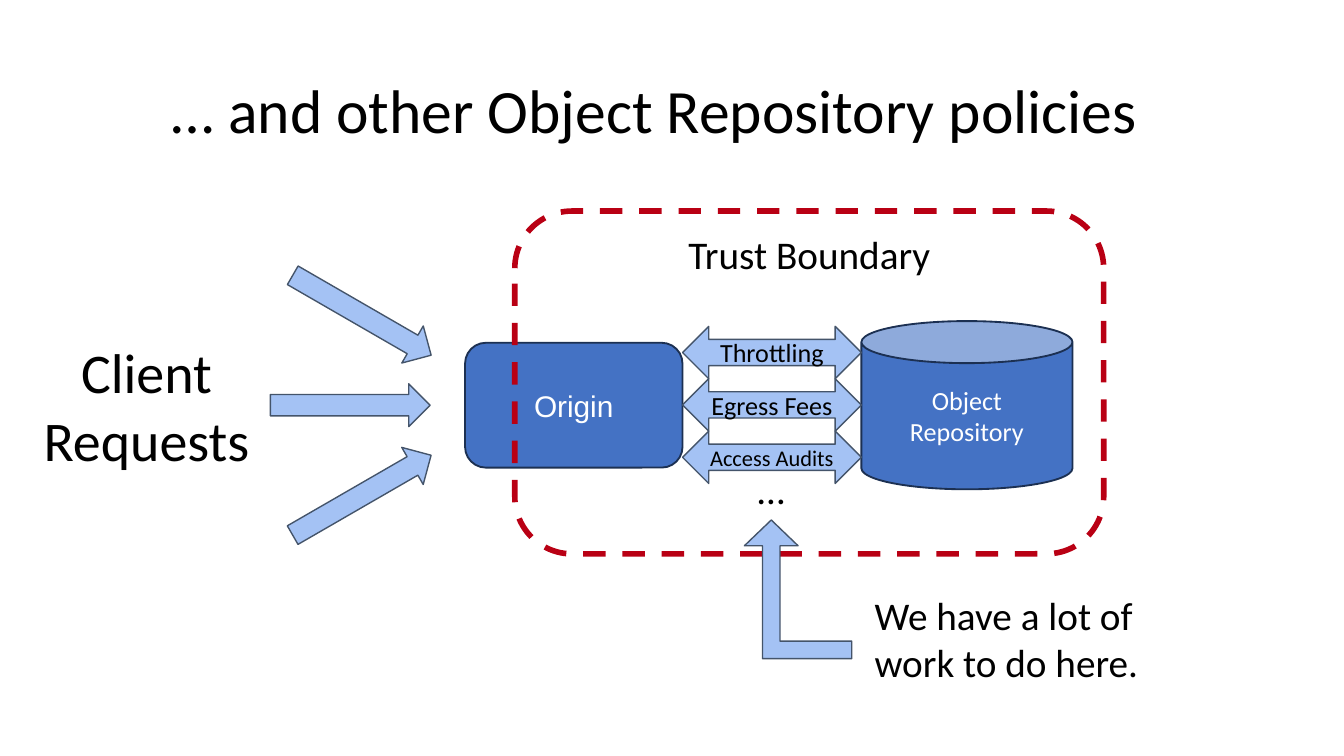
from pptx import Presentation
from pptx.dml.color import RGBColor
from pptx.enum.dml import MSO_LINE_DASH_STYLE as Dash
from pptx.enum.shapes import MSO_SHAPE as Shape
from pptx.enum.text import MSO_ANCHOR as Anchor, PP_ALIGN as Align
from pptx.util import Cm, Pt

COLORS = {
    "text": "000000", "inverse": "FFFFFF",
    "node": "4472C4", "node_line": "1C3052",
    "arrow": "A4C2F4", "arrow_line": "44546A",
    "boundary": "B90014",
}


def color(name):
    return RGBColor.from_string(COLORS[name])


def write(shape, text, size=21, font="Calibri", ink="text", align=Align.CENTER,
          anchor=Anchor.MIDDLE, inset=(0.25, 0.25), spacing=None):
    """Fill a shape with text, one paragraph per line."""
    frame = shape.text_frame
    frame.word_wrap = True
    frame.vertical_anchor = anchor
    frame.margin_left = frame.margin_right = Cm(inset[0])
    frame.margin_top = frame.margin_bottom = Cm(inset[1])
    frame.text = text
    for line in frame.paragraphs:
        line.alignment = align
        line.line_spacing = spacing
        line.font.size = Pt(size)
        line.font.name = font
        line.font.color.rgb = color(ink)


def add_label(slide, box, text, **style):
    write(slide.shapes.add_textbox(*map(Cm, box)), text, **style)


def add_block(slide, kind, box, fill="arrow", line="arrow_line", weight=0.75):
    block = slide.shapes.add_shape(kind, *map(Cm, box))
    block.shadow.inherit = False
    if fill:
        block.fill.solid()
        block.fill.fore_color.rgb = color(fill)
    else:
        block.fill.background()
    block.line.color.rgb = color(line)
    block.line.width = Pt(weight)
    return block


def add_node(slide, kind, box, text, **style):
    node = add_block(slide, kind, box, "node", "node_line", 1)
    write(node, text, ink="inverse", inset=(0.18, 0.1), **style)


def client_requests(slide, x, y, w, h):
    """Caption with three arrows converging to the right of it."""
    arrow_w, arrow_h, step = 3.02, 0.81, 1.7
    middle = y + h / 2
    add_label(slide, (x, y, 4.62, h), "Client Requests", size=30)
    for row, angle in ((-1, 30), (0, 0), (1, -30)):
        left = x + w - arrow_w - (0 if row else 0.22)
        top = middle + row * step - arrow_h / 2
        arrow = add_block(slide, Shape.RIGHT_ARROW, (left, top, arrow_w, arrow_h))
        arrow.rotation = angle


def trust_boundary(slide, x, y, w, h):
    """Origin and repository, joined by policies inside a dashed frame."""
    origin_right, repository_left = x + 3.17, x + 6.55
    add_node(slide, Shape.ROUNDED_RECTANGLE, (x - 0.94, y + 2.49, 4.11, 2.36),
             "Origin", size=16, font="Arial")
    add_node(slide, Shape.CAN, (repository_left, y + 2.08, 3.99, 3.18),
             "Object\nRepository", size=14)

    frame = add_block(slide, Shape.ROUNDED_RECTANGLE, (x, y, w, h),
                      None, "boundary", 3)
    frame.line.dash_style = Dash.DASH
    add_label(slide, (x + 2.67, y + 0.2, 5.79, 1.22), "Trust Boundary")

    # Policies fill the gap between the two nodes
    policy_h = 0.99
    policies = (("Throttling", 14), ("Egress Fees", 14), ("Access Audits", 12))
    for row, (policy, size) in enumerate(policies):
        arrow = add_block(slide, Shape.LEFT_RIGHT_ARROW,
                          (origin_right, y + 2.18 + row * policy_h,
                           repository_left - origin_right, policy_h))
        write(arrow, policy, size=size)
    add_label(slide, (x + 3.83, y + 4.85, 2.03, 0.81), "…")


def remark(slide, x, y, w, h):
    """Bent arrow pointing up, with the remark at its tail."""
    arrow = add_block(slide, Shape.BENT_UP_ARROW, (x, y, 2.03, 2.62))
    for index, value in enumerate((0.163, 0.25, 0.24)):
        arrow.adjustments[index] = value
    arrow._element.spPr.xfrm.set("flipH", "1")
    add_label(slide, (x + 2.21, y + 1.09, w - 2.21, h - 1.09),
              "We have a lot of work to do here.",
              align=Align.LEFT, anchor=Anchor.TOP)


def main():
    deck = Presentation()
    deck.slide_width, deck.slide_height = Cm(25.4), Cm(14.29)
    slide = deck.slides.add_slide(deck.slide_layouts[6])

    add_label(slide, (3.07, 0.76, 20.6, 2.77),
              "… and other Object Repository policies", size=33,
              align=Align.LEFT, inset=(0.18, 0.1), spacing=0.9)
    trust_boundary(slide, 9.73, 3.99, 11.13, 6.48)
    client_requests(slide, 0.46, 6.48, 7.89, 2.36)
    remark(slide, 14.07, 9.83, 9.14, 2.97)

    deck.save("out.pptx")


if __name__ == "__main__":
    main()
